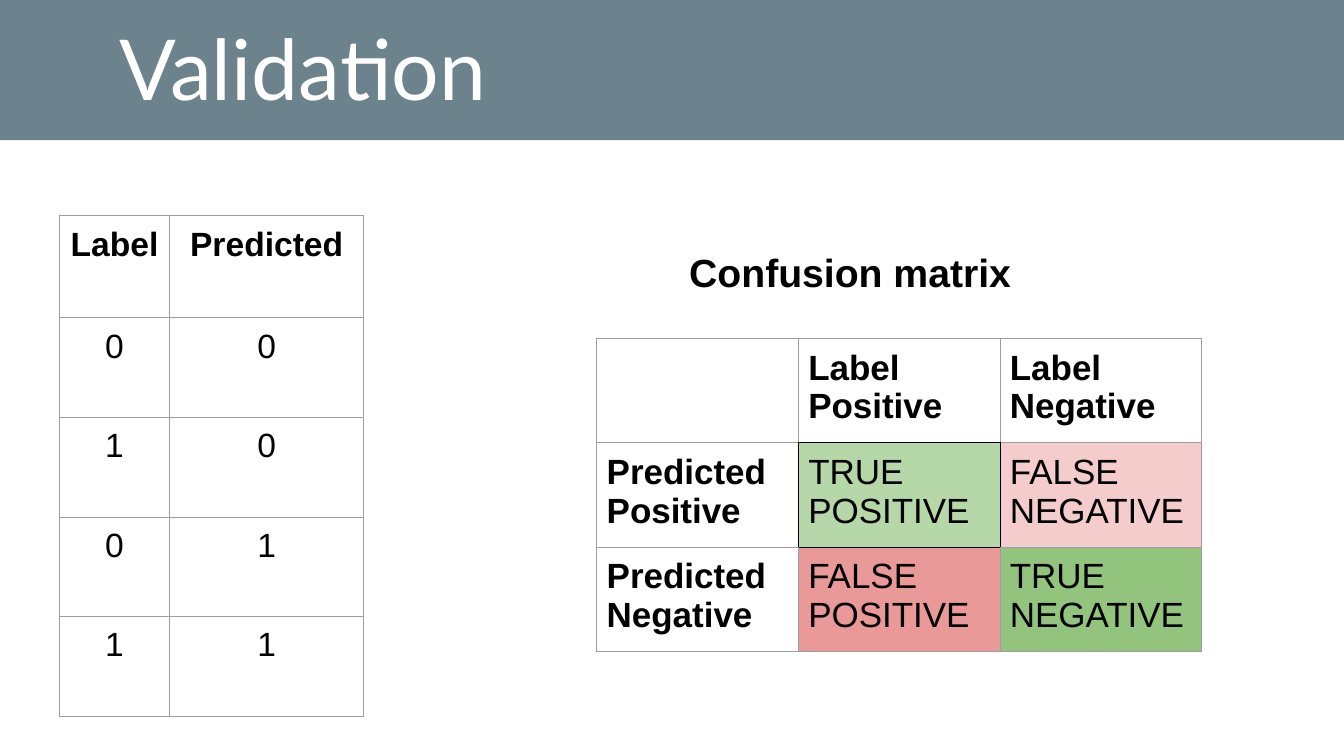
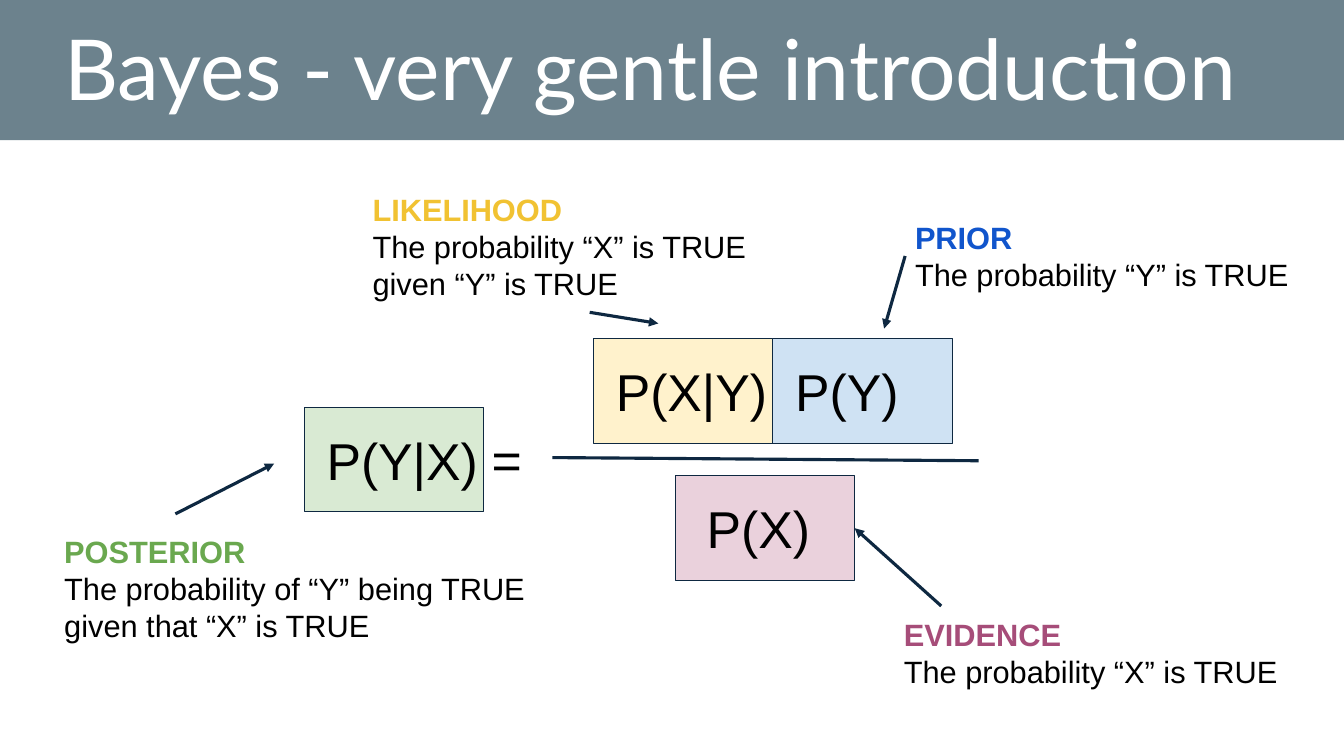
from dataclasses import dataclass
from typing import Optional

from lxml import etree
from pptx import Presentation
from pptx.dml.color import RGBColor
from pptx.enum.shapes import MSO_CONNECTOR, MSO_SHAPE
from pptx.enum.text import MSO_ANCHOR, PP_ALIGN
from pptx.oxml.ns import qn
from pptx.util import Cm, Pt

RECTANGLE = MSO_SHAPE.RECTANGLE
STRAIGHT = MSO_CONNECTOR.STRAIGHT
LEFT, CENTER = PP_ALIGN.LEFT, PP_ALIGN.CENTER
TOP, MIDDLE, BOTTOM = MSO_ANCHOR.TOP, MSO_ANCHOR.MIDDLE, MSO_ANCHOR.BOTTOM

BLACK = RGBColor(0x00, 0x00, 0x00)
WHITE = RGBColor(0xFF, 0xFF, 0xFF)
BAND = RGBColor(0x0B, 0x30, 0x41)
NAVY = RGBColor(0x0E, 0x28, 0x41)
GRID = RGBColor(0x9E, 0x9E, 0x9E)
TRUE_POSITIVE = RGBColor(0xB6, 0xD7, 0xA8)
FALSE_NEGATIVE = RGBColor(0xF4, 0xCC, 0xCC)
FALSE_POSITIVE = RGBColor(0xEA, 0x99, 0x99)
TRUE_NEGATIVE = RGBColor(0x93, 0xC4, 0x7D)
PALE_BLUE = RGBColor(0xCF, 0xE2, 0xF3)
PALE_YELLOW = RGBColor(0xFF, 0xF2, 0xCC)
PALE_PINK = RGBColor(0xEA, 0xD1, 0xDC)
PALE_GREEN = RGBColor(0xD9, 0xEA, 0xD3)
GREEN = RGBColor(0x6A, 0xA8, 0x4F)
PURPLE = RGBColor(0xA6, 0x4D, 0x79)
BLUE = RGBColor(0x11, 0x55, 0xCC)
YELLOW = RGBColor(0xF1, 0xC2, 0x32)

SLIDE_WIDTH, SLIDE_HEIGHT = 33.87, 19.05
BAND_HEIGHT = 3.53
TITLE_HEIGHT = 3.12
INSET = 0.25
TERM_WIDTH, TERM_HEIGHT = 4.52, 2.64
NUMERATOR_LEFT, NUMERATOR_TOP = 14.96, 8.53
EDGES = {"a:lnL": (0, -1), "a:lnR": (0, 1), "a:lnT": (-1, 0), "a:lnB": (1, 0)}


@dataclass(frozen=True)
class Style:
    size: float
    color: RGBColor = BLACK
    bold: bool = False
    font: str = "Arial"
    align: PP_ALIGN = LEFT


@dataclass(frozen=True)
class Box:
    left: float
    top: float
    width: float
    height: float


@dataclass(frozen=True)
class Entry:
    text: str = ""
    bold: bool = False
    fill: Optional[RGBColor] = None
    outlined: bool = False


@dataclass(frozen=True)
class Term:
    text: str
    left: float
    top: float
    fill: RGBColor
    indent: float = 0.56


@dataclass(frozen=True)
class Note:
    heading: str
    meaning: str
    color: RGBColor
    box: Box


@dataclass(frozen=True)
class Stroke:
    start: tuple[float, float]
    end: tuple[float, float]
    target: Optional[str] = None
    arrow: bool = True


def style_paragraph(paragraph, style: Style) -> None:
    paragraph.alignment = style.align
    for run in paragraph.runs:
        run.font.size = Pt(style.size)
        run.font.name = style.font
        run.font.bold = style.bold
        run.font.color.rgb = style.color


def write(frame, text: str, *styles: Style) -> None:
    frame.word_wrap = True
    frame.text = text
    for index, paragraph in enumerate(frame.paragraphs):
        style_paragraph(paragraph, styles[min(index, len(styles) - 1)])


def set_insets(frame, horizontal: float, vertical: float) -> None:
    frame.margin_left = frame.margin_right = Cm(horizontal)
    frame.margin_top = frame.margin_bottom = Cm(vertical)


def add_text(slide, box: Box, text: str, *styles: Style, vertical: float = INSET, anchor: MSO_ANCHOR = TOP):
    frame = slide.shapes.add_textbox(Cm(box.left), Cm(box.top), Cm(box.width), Cm(box.height)).text_frame
    set_insets(frame, INSET, vertical)
    frame.vertical_anchor = anchor
    write(frame, text, *styles)
    return frame


def add_rectangle(slide, box: Box, fill: RGBColor):
    rectangle = slide.shapes.add_shape(RECTANGLE, Cm(box.left), Cm(box.top), Cm(box.width), Cm(box.height))
    rectangle.shadow.inherit = False
    rectangle.fill.solid()
    rectangle.fill.fore_color.rgb = fill
    return rectangle


def add_titled_slide(deck, title: str, left: float, width: float, align: PP_ALIGN):
    slide = deck.slides.add_slide(deck.slide_layouts[6])
    band = add_rectangle(slide, Box(0, 0, SLIDE_WIDTH, BAND_HEIGHT), BAND)
    band.line.fill.background()
    band_color = band._element.spPr.find(".//" + qn("a:srgbClr"))
    etree.SubElement(band_color, qn("a:alpha"), val="60000")
    style = Style(60, WHITE, font="Lato", align=align)
    frame = add_text(slide, Box(left, 0, width, TITLE_HEIGHT), title, style, vertical=0.13, anchor=BOTTOM)
    frame.paragraphs[0].line_spacing = 0.9
    return slide


def add_cell_border(cell, edge: str, color: RGBColor) -> None:
    line = etree.SubElement(cell._tc.get_or_add_tcPr(), qn(edge), w=str(Pt(0.75)))
    fill = etree.SubElement(line, qn("a:solidFill"))
    etree.SubElement(fill, qn("a:srgbClr"), val=str(color))


def add_grid(slide, left: float, top: float, widths: list[float], heights: list[float],
             entries: list[list[Entry]], size: float, align: PP_ALIGN) -> None:
    table = slide.shapes.add_table(len(heights), len(widths), Cm(left), Cm(top),
                                   Cm(sum(widths)), Cm(sum(heights))).table
    table.first_row = table.horz_banding = False
    for column, width in zip(table.columns, widths):
        column.width = Cm(width)
    for row, height in zip(table.rows, heights):
        row.height = Cm(height)
    outlined = {(r, c) for r, row in enumerate(entries) for c, entry in enumerate(row) if entry.outlined}
    for r, row in enumerate(entries):
        for c, entry in enumerate(row):
            cell = table.cell(r, c)
            set_insets(cell, INSET, INSET)
            write(cell.text_frame, entry.text, Style(size, bold=entry.bold, align=align))
            for edge, (down, across) in EDGES.items():
                dark = outlined & {(r, c), (r + down, c + across)}
                add_cell_border(cell, edge, BLACK if dark else GRID)
            if entry.fill is None:
                cell.fill.background()
            else:
                cell.fill.solid()
                cell.fill.fore_color.rgb = entry.fill


def add_term(slide, term: Term):
    rectangle = add_rectangle(slide, Box(term.left, term.top, TERM_WIDTH, TERM_HEIGHT), term.fill)
    rectangle.line.color.rgb = NAVY
    rectangle.line.width = Pt(0.75)
    frame = rectangle.text_frame
    set_insets(frame, 0, 0)
    frame.margin_left = Cm(term.indent)
    frame.vertical_anchor = MIDDLE
    write(frame, term.text, Style(37))
    return rectangle


def add_stroke(slide, stroke: Stroke, terms: dict) -> None:
    connector = slide.shapes.add_connector(STRAIGHT, *(Cm(value) for value in stroke.start + stroke.end))
    connector.line.color.rgb = NAVY
    connector.line.width = Pt(2.25)
    if stroke.arrow:
        etree.SubElement(connector.line._get_or_add_ln(), qn("a:tailEnd"), type="triangle")
    etree.SubElement(connector._element.spPr, qn("a:effectLst"))
    if stroke.target:
        connector.end_connect(terms[stroke.target], 3)


def build_validation(deck) -> None:
    slide = add_titled_slide(deck, "Validation", 0, 15.27, CENTER)
    add_text(slide, Box(17.12, 6.02, 13.56, 1.7), "Confusion matrix", Style(28, bold=True))
    outcomes = [[Entry("Label", True), Entry("Predicted", True)]]
    outcomes += [[Entry(label), Entry(predicted)] for label, predicted in ("00", "10", "01", "11")]
    add_grid(slide, 1.5, 5.44, [2.77, 4.9], [2.57] + [2.51] * 4, outcomes, 24, CENTER)
    confusion = [
        [Entry(), Entry("Label\nPositive", True), Entry("Label\nNegative", True)],
        [Entry("Predicted\nPositive", True),
         Entry("TRUE\nPOSITIVE", fill=TRUE_POSITIVE, outlined=True),
         Entry("FALSE NEGATIVE", fill=FALSE_NEGATIVE)],
        [Entry("Predicted\nNegative", True),
         Entry("FALSE POSITIVE", fill=FALSE_POSITIVE),
         Entry("TRUE\nNEGATIVE", fill=TRUE_NEGATIVE)],
    ]
    add_grid(slide, 15.04, 8.53, [5.08] * 3, [2.63] * 3, confusion, 25, LEFT)


def build_bayes(deck) -> None:
    slide = add_titled_slide(deck, "Bayes - very gentle introduction", 1.37, 31.32, LEFT)
    formula = [
        Term("P(Y)", NUMERATOR_LEFT + TERM_WIDTH, NUMERATOR_TOP, PALE_BLUE),
        Term("P(X|Y)", NUMERATOR_LEFT, NUMERATOR_TOP, PALE_YELLOW),
        Term("P(X)", 17.02, 11.99, PALE_PINK, 0.79),
        Term("P(Y|X)", 7.67, 10.26, PALE_GREEN),
    ]
    terms = {term.text: add_term(slide, term) for term in formula}
    add_text(slide, Box(12.14, 10.52, 1.4, 2.08), "=", Style(37))
    notes = [
        Note("POSTERIOR", "The probability of “Y” being TRUE given that “X” is TRUE", GREEN,
             Box(1.37, 13.18, 13.34, 3.33)),
        Note("EVIDENCE", "The probability “X” is TRUE", PURPLE, Box(22.53, 15.27, 10.64, 2.39)),
        Note("PRIOR", "The probability “Y” is TRUE", BLUE, Box(22.81, 5.26, 10.36, 2.39)),
        Note("LIKELIHOOD", "The probability “X” is TRUE given “Y” is TRUE", YELLOW,
             Box(9.14, 4.55, 11.4, 3.33)),
    ]
    for note in notes:
        add_text(slide, note.box, f"{note.heading}\n{note.meaning}", Style(22, note.color, True), Style(22))
    strokes = [
        Stroke((13.92, 11.53), (24.66, 11.61), arrow=False),
        Stroke((4.42, 12.95), (6.91, 11.68)),
        Stroke((14.86, 7.87), (16.59, 8.15)),
        Stroke((23.72, 15.27), (21.54, 13.31), target="P(X)"),
        Stroke((22.81, 6.45), (22.28, 8.28)),
    ]
    for stroke in strokes:
        add_stroke(slide, stroke, terms)


def main() -> None:
    deck = Presentation()
    deck.slide_width, deck.slide_height = Cm(SLIDE_WIDTH), Cm(SLIDE_HEIGHT)
    build_validation(deck)
    build_bayes(deck)
    deck.save("out.pptx")


if __name__ == "__main__":
    main()
